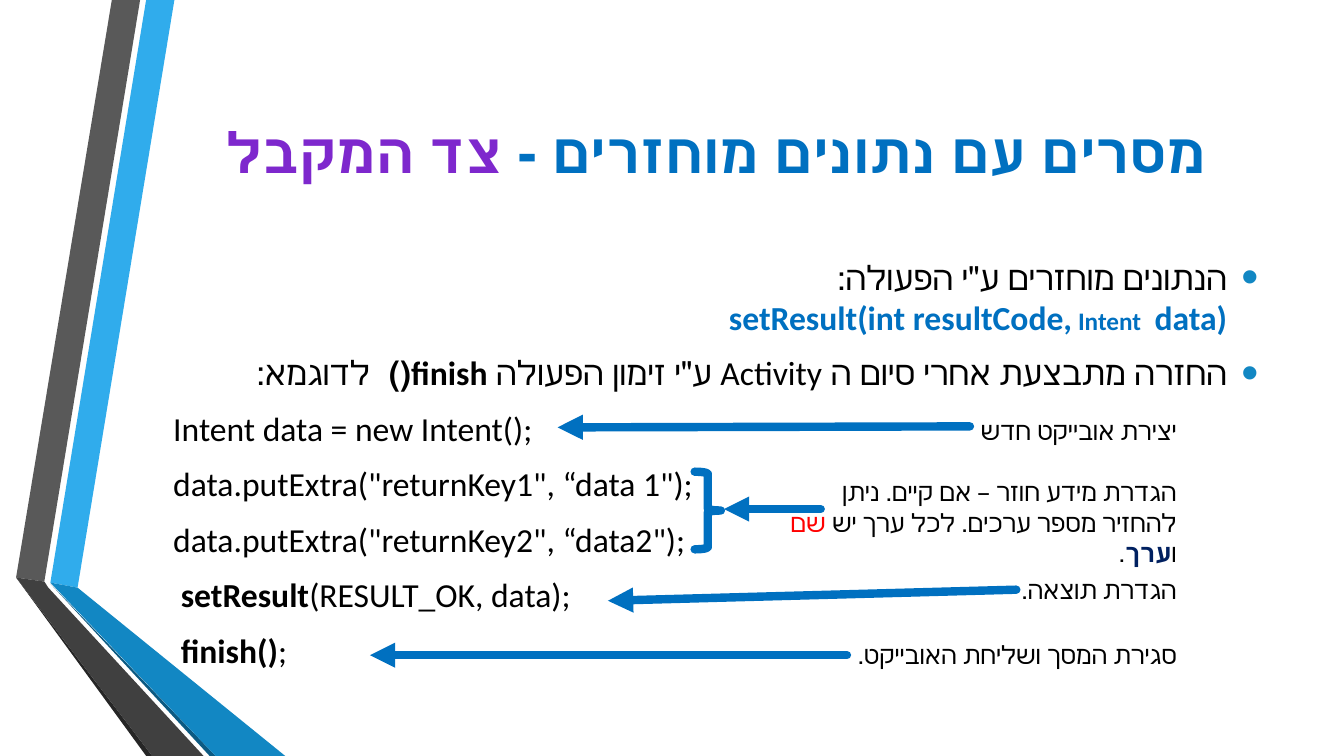
from dataclasses import dataclass

from lxml import etree
from pptx import Presentation
from pptx.dml.color import RGBColor
from pptx.enum.shapes import MSO_CONNECTOR, MSO_SHAPE
from pptx.enum.text import MSO_ANCHOR, PP_ALIGN
from pptx.oxml.ns import qn
from pptx.util import Inches, Pt

LEFT, CENTER, RIGHT = PP_ALIGN.LEFT, PP_ALIGN.CENTER, PP_ALIGN.RIGHT
TOP, MIDDLE = MSO_ANCHOR.TOP, MSO_ANCHOR.MIDDLE
STRAIGHT = MSO_CONNECTOR.STRAIGHT
RIGHT_BRACE = MSO_SHAPE.RIGHT_BRACE
TITLE_ONLY = 5


@dataclass(frozen=True)
class Theme:
    title_font: str = "Lato"
    body_font: str = "Calibri"
    title_size: float = 40
    body_size: float = 24
    note_size: float = 18
    black: str = "000000"
    blue: str = "0070C0"
    purple: str = "7E28CD"
    red: str = "FF0000"
    navy: str = "002060"
    bullet: str = "1287C3"
    line_width: float = 6


THEME = Theme()


@dataclass(frozen=True)
class Span:
    text: str
    color: str = THEME.black
    bold: bool = False
    size: float = THEME.body_size
    font: str = THEME.body_font


@dataclass(frozen=True)
class Ribbon:
    color: str
    points: list[tuple[float, float]]


@dataclass(frozen=True)
class Note:
    left: float
    top: float
    width: float
    height: float
    spans: list[Span]


@dataclass(frozen=True)
class Arrow:
    start: tuple[float, float]
    end: tuple[float, float]


def note_span(text: str, color: str = THEME.black, bold: bool = False) -> Span:
    return Span(text, color, bold, THEME.note_size)


RIBBONS = [
    Ribbon("30ACEC", [(0.5, 5.78), (0.77, 5.83), (1.73, 0), (1.45, 0)]),
    Ribbon("595959", [(1.39, 0), (1.11, 0), (0.16, 5.73), (0.44, 5.77)]),
    Ribbon("262626", [(0.16, 5.73), (1.45, 7.5), (1.51, 7.5)]),
    Ribbon("0C5A82", [(0.5, 5.79), (2.08, 7.5), (2.14, 7.5)]),
    Ribbon("1287C3", [(0.5, 5.78), (2.14, 7.5), (2.83, 7.5), (0.77, 5.83)]),
    Ribbon("404040", [(2.02, 7.5), (0.48, 5.83), (0.44, 5.77), (0.16, 5.73), (1.51, 7.5)]),
]
TITLE = [
    Span("מסרים עם נתונים מוחזרים - ", THEME.blue, True, THEME.title_size, THEME.title_font),
    Span("צד המקבל", THEME.purple, True, THEME.title_size, THEME.title_font),
]
BULLETS = [
    [Span('הנתונים מוחזרים ע"י הפעולה: \n'),
     Span("setResult(int resultCode,", THEME.blue, True),
     Span(" Intent ", THEME.blue, True, THEME.note_size),
     Span(" data) ", THEME.blue, True)],
    [Span('החזרה מתבצעת אחרי סיום ה Activity ע"י זימון הפעולה '),
     Span("finish()  ", bold=True),
     Span("לדוגמא:")],
]
CODE = [
    [Span("Intent data = new Intent();")],
    [Span('data.putExtra("returnKey1", “data 1");')],
    [Span('data.putExtra("returnKey2", “data2");')],
    [Span(" setResult", bold=True), Span("(RESULT_OK, data);")],
    [Span(" "), Span("finish()", bold=True), Span(";")],
]
NOTES = [
    Note(9.47, 4.07, 2.3, 0.4, [note_span("יצירת אובייקט חדש")]),
    Note(7.58, 4.68, 4.19, 0.71, [
        note_span("הגדרת מידע חוזר – אם קיים. ניתן להחזיר מספר ערכים. לכל ערך יש "),
        note_span("שם", THEME.red),
        note_span(" ו"),
        note_span("ערך", THEME.navy, True),
        note_span("."),
    ]),
    Note(7.5, 5.65, 4.27, 0.4, [note_span("הגדרת תוצאה. ")]),
    Note(7.5, 6.29, 4.27, 0.4, [note_span("סגירת המסך ושליחת האובייקט.")]),
]
ARROWS = [
    Arrow((8.4, 6.5), (3.67, 6.5)),
    Arrow((10.08, 5.85), (6.03, 5.96)),
    Arrow((8.14, 5.05), (7.18, 5.05)),
    Arrow((9.62, 4.23), (5.53, 4.24)),
]


def write_spans(para, spans: list[Span], align, right_to_left: bool = True) -> None:
    para.alignment = align
    if right_to_left:
        para._p.get_or_add_pPr().set("rtl", "1")
    for span in spans:
        run = para.add_run()
        run.text = span.text.rstrip("\n")
        font = run.font
        font.name, font.size, font.bold = span.font, Pt(span.size), span.bold
        font.color.rgb = RGBColor.from_string(span.color)
        if span.text.endswith("\n"):
            para.add_line_break()


def add_bullet(para) -> None:
    properties = para._p.get_or_add_pPr()
    properties.set("marL", str(Inches(0.31)))
    properties.set("indent", str(-Inches(0.31)))
    color = etree.SubElement(properties, qn("a:buClr"))
    etree.SubElement(color, qn("a:srgbClr"), val=THEME.bullet)
    etree.SubElement(properties, qn("a:buSzPct"), val="145000")
    etree.SubElement(properties, qn("a:buFont"), typeface="Arial")
    etree.SubElement(properties, qn("a:buChar"), char="•")


def add_text_box(slide, left: float, top: float, width: float, height: float, anchor):
    box = slide.shapes.add_textbox(Inches(left), Inches(top), Inches(width), Inches(height))
    box.text_frame.word_wrap = True
    box.text_frame.vertical_anchor = anchor
    return box.text_frame


def add_ribbon(slide, ribbon: Ribbon) -> None:
    points = [(Inches(x), Inches(y)) for x, y in ribbon.points]
    builder = slide.shapes.build_freeform(*points[0])
    builder.add_line_segments(points[1:], close=True)
    shape = builder.convert_to_shape()
    shape.shadow.inherit = False
    shape.fill.solid()
    shape.fill.fore_color.rgb = RGBColor.from_string(ribbon.color)
    shape.line.fill.background()


def add_title(slide) -> None:
    title = slide.shapes.title
    title.left, title.top = Inches(1.62), Inches(0.75)
    title.width, title.height = Inches(10.96), Inches(1.5)
    title.text_frame.vertical_anchor = MIDDLE
    write_spans(title.text_frame.paragraphs[0], TITLE, CENTER)


def add_body(slide) -> None:
    frame = add_text_box(slide, 1.62, 2.09, 10.96, 5.01, MIDDLE)
    for index, spans in enumerate(BULLETS + CODE):
        para = frame.add_paragraph() if index else frame.paragraphs[0]
        para.space_before, para.space_after = Pt(4.8), Pt(6)
        is_bullet = index < len(BULLETS)
        write_spans(para, spans, RIGHT if is_bullet else LEFT, is_bullet)
        if is_bullet:
            add_bullet(para)


def style_line(shape):
    """Apply the thick, round-ended blue line and return its XML element."""
    shape.line.color.rgb = RGBColor.from_string(THEME.blue)
    shape.line.width = Pt(THEME.line_width)
    line = shape.line._get_or_add_ln()
    line.set("cap", "rnd")
    return line


def add_arrow(slide, arrow: Arrow) -> None:
    ends = [Inches(value) for value in arrow.start + arrow.end]
    connector = slide.shapes.add_connector(STRAIGHT, *ends)
    etree.SubElement(style_line(connector), qn("a:tailEnd"), type="triangle")
    etree.SubElement(connector._element.spPr, qn("a:effectLst"))


def add_brace(slide) -> None:
    brace = slide.shapes.add_shape(
        RIGHT_BRACE, Inches(6.89), Inches(4.68), Inches(0.26), Inches(0.77))
    brace.shadow.inherit = False
    brace.fill.background()
    style_line(brace)


def main() -> None:
    deck = Presentation()
    deck.slide_width, deck.slide_height = Inches(13.33), Inches(7.5)
    slide = deck.slides.add_slide(deck.slide_layouts[TITLE_ONLY])
    for ribbon in RIBBONS:
        add_ribbon(slide, ribbon)
    add_title(slide)
    add_body(slide)
    for note in NOTES:
        frame = add_text_box(slide, note.left, note.top, note.width, note.height, TOP)
        write_spans(frame.paragraphs[0], note.spans, RIGHT)
    for arrow in ARROWS:
        add_arrow(slide, arrow)
    add_brace(slide)
    deck.save("out.pptx")


if __name__ == "__main__":
    main()
